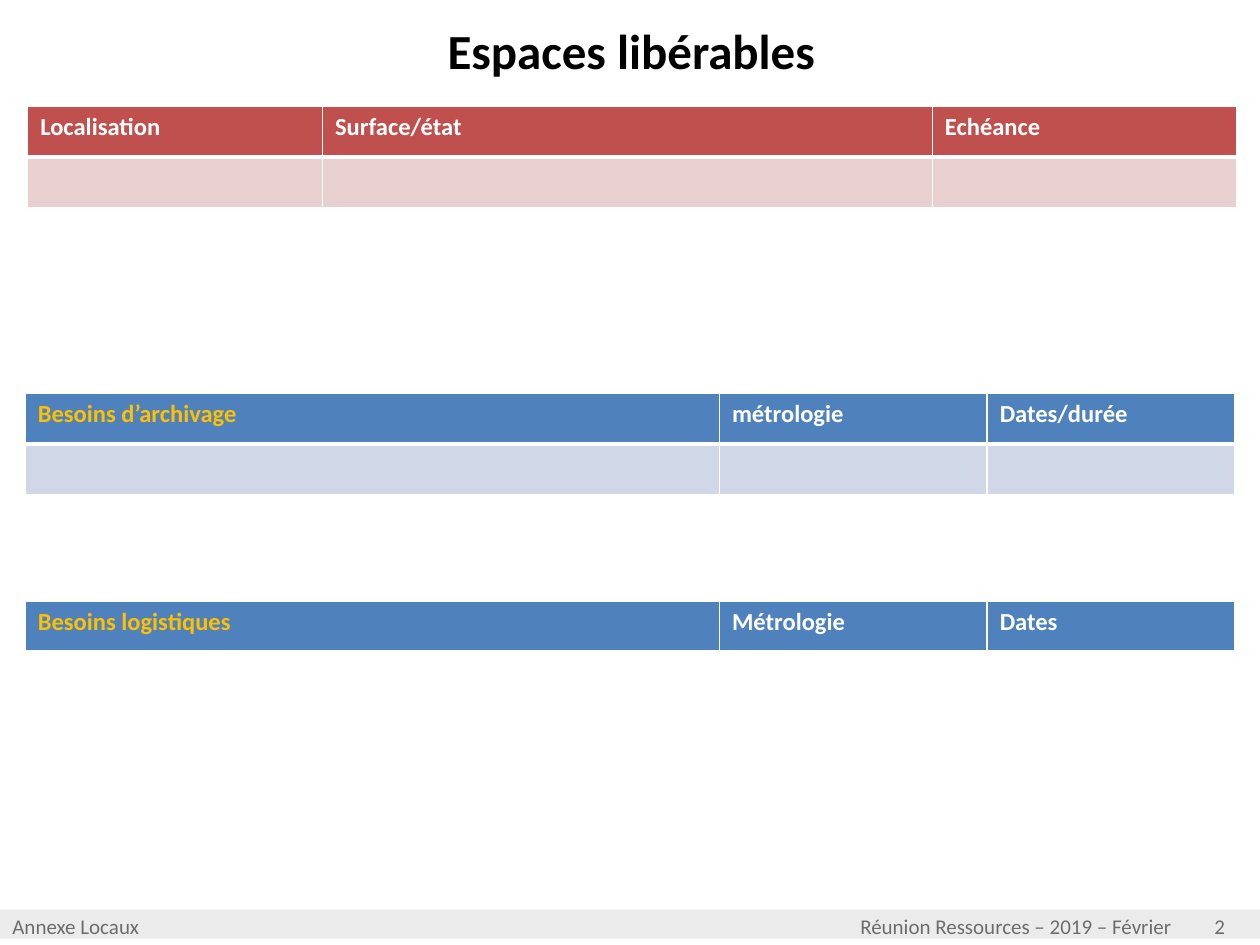
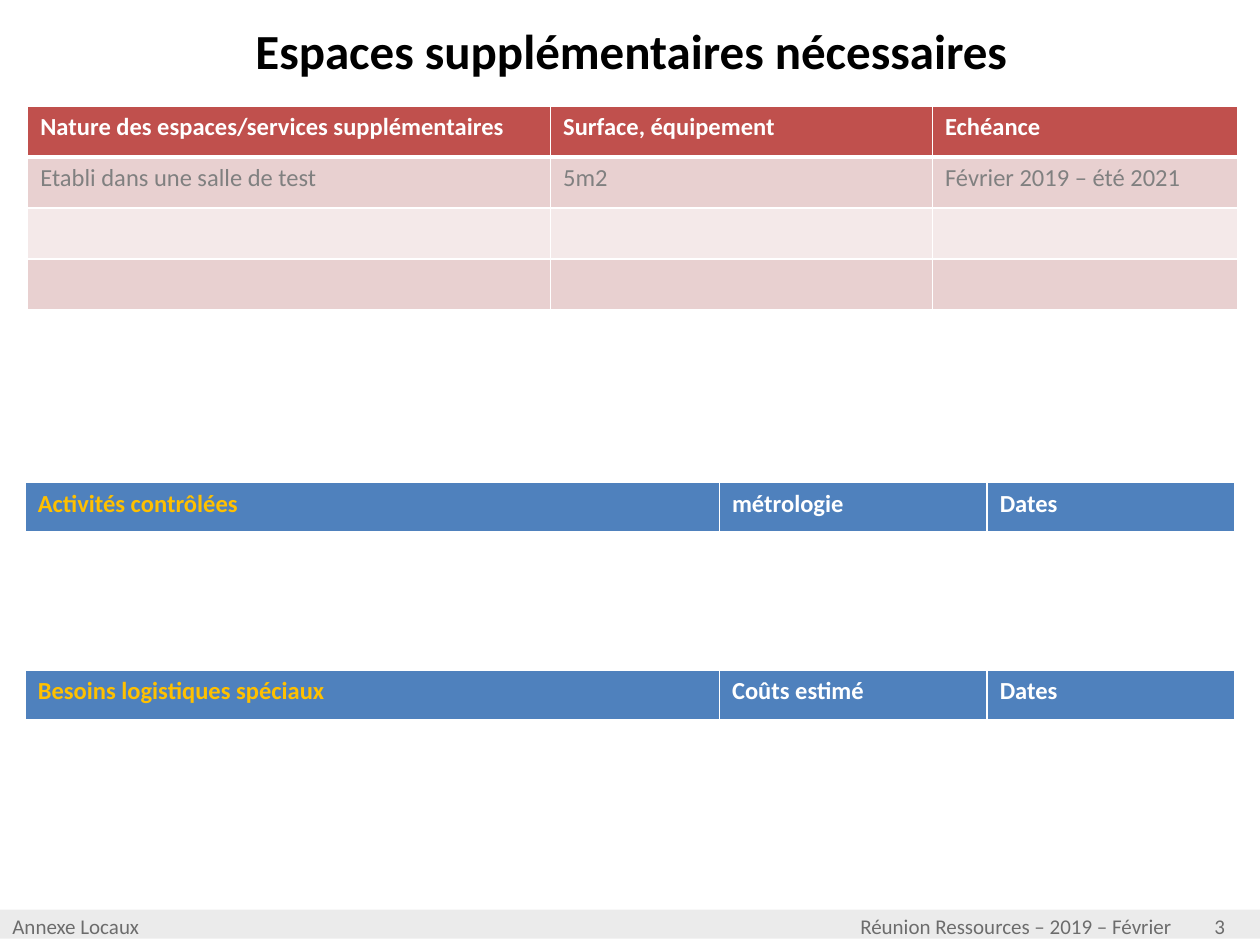
from dataclasses import dataclass

from lxml import etree
from pptx import Presentation
from pptx.dml.color import RGBColor
from pptx.enum.shapes import MSO_SHAPE
from pptx.enum.text import MSO_ANCHOR, PP_ALIGN
from pptx.oxml.ns import qn
from pptx.util import Inches, Pt

RECTANGLE = MSO_SHAPE.RECTANGLE
MIDDLE, TOP = MSO_ANCHOR.MIDDLE, MSO_ANCHOR.TOP
CENTER, LEFT = PP_ALIGN.CENTER, PP_ALIGN.LEFT

SLIDE_W, SLIDE_H = Inches(10), Inches(7.5)


@dataclass(frozen=True)
class Theme:
    font: str = "Calibri"
    title_size: int = 28
    table_size: int = 14
    footer_size: int = 12
    ink: str = "000000"
    white: str = "FFFFFF"
    example: str = "808080"
    accent: str = "FFC000"
    band: str = "D9D9D9"
    band_opacity: int = 50
    thin_rule: int = 1
    header_rule: int = 3


THEME = Theme()


@dataclass(frozen=True)
class Box:
    """Place on the slide, in percent of its width and height."""
    left: float
    top: float
    width: float
    height: float

    def emu(self) -> tuple[int, int, int, int]:
        return (across(self.left), down(self.top),
                across(self.width), down(self.height))


@dataclass(frozen=True)
class Palette:
    header: str
    first_header: str
    stripes: tuple[str, ...]


@dataclass(frozen=True)
class Layout:
    """Left edge and column widths in percent of the slide's width."""
    left: float
    columns: tuple[float, ...]
    palette: Palette


@dataclass(frozen=True)
class Grid:
    layout: Layout
    top: float
    header: tuple[str, ...]
    example: tuple[str, ...] = ()
    body_rows: int = 0


@dataclass(frozen=True)
class Page:
    number: int
    title: str
    grids: tuple[Grid, ...]


# Shared positions and table styles
ROW_HEIGHT = 5.4
TITLE_BOX = Box(5.1, 0.67, 90, 9.2)
BAND_BOX = Box(0, 96.27, 100, 3.07)
SPACES_TOP = 11.2
RED = Palette("C0504D", THEME.white, ("E8D0D0", "F4E9E9"))
BLUE = Palette("4F81BD", THEME.accent, ("D0D8E8",))
FREED_SPACES = Layout(2.2, (23.4, 48.4, 24.2), RED)
EXTRA_SPACES = Layout(2.2, (41.5, 30.3, 24.2), RED)
NEEDS = Layout(2, (55.1, 21.25, 19.65), BLUE)

PAGES = (
    Page(2, "Espaces libérables", (
        Grid(FREED_SPACES, SPACES_TOP,
             ("Localisation", "Surface/état", "Echéance"), body_rows=1),
        Grid(NEEDS, 63.6, ("Besoins logistiques", "Métrologie", "Dates")),
        Grid(NEEDS, 41.6, ("Besoins d’archivage", "métrologie", "Dates/durée"),
             body_rows=1),
    )),
    Page(3, "Espaces supplémentaires nécessaires", (
        Grid(EXTRA_SPACES, SPACES_TOP,
             ("Nature des espaces/services supplémentaires",
              "Surface, équipement", "Echéance"),
             ("Etabli dans une salle de test", "5m2", "Février 2019 – été 2021"),
             body_rows=3),
        Grid(NEEDS, 70.93, ("Besoins logistiques spéciaux", "Coûts estimé", "Dates")),
        Grid(NEEDS, 51.07, ("Activités contrôlées", "métrologie", "Dates")),
    )),
)


def across(percent: float) -> int:
    return round(SLIDE_W * percent / 100)


def down(percent: float) -> int:
    return round(SLIDE_H * percent / 100)


def write(frame, text: str, size: int, color: str, bold: bool = False,
          align=LEFT) -> None:
    paragraph = frame.paragraphs[0]
    paragraph.alignment = align
    run = paragraph.add_run()
    run.text = text
    formats = {"name": THEME.font, "size": Pt(size), "bold": bold}
    for attribute, value in formats.items():
        setattr(run.font, attribute, value)
    run.font.color.rgb = RGBColor.from_string(color)


def add_text(slide, box: Box, text: str, size: int, bold: bool = False,
             align=LEFT, anchor=TOP, wrap: bool = False) -> None:
    frame = slide.shapes.add_textbox(*box.emu()).text_frame
    for attribute, value in {"word_wrap": wrap, "vertical_anchor": anchor}.items():
        setattr(frame, attribute, value)
    write(frame, text, size, THEME.ink, bold, align)


def add_footer(slide, number: int) -> None:
    labels = (
        (67.3, 27, "Réunion Ressources – 2019 – Février"),
        (95.4, 4.8, str(number)),
        (0, 12.2, "Annexe Locaux"),
    )
    for left, width, text in labels:
        add_text(slide, Box(left, 96, width, 4), text, THEME.footer_size)

    # The translucent band lies over the labels and greys them
    band = slide.shapes.add_shape(RECTANGLE, *BAND_BOX.emu())
    band.shadow.inherit = False
    band.line.fill.background()
    band.fill.solid()
    band.fill.fore_color.rgb = RGBColor.from_string(THEME.band)
    color = band.fill._xPr.find(qn("a:solidFill"))[0]
    etree.SubElement(color, qn("a:alpha"), val=str(THEME.band_opacity * 1000))


def style_cell(cell, color: str, top_rule: int, bottom_rule: int) -> None:
    properties = cell._tc.get_or_add_tcPr()
    rules = {"L": THEME.thin_rule, "R": THEME.thin_rule,
             "T": top_rule, "B": bottom_rule}
    for side, points in rules.items():
        rule = etree.SubElement(properties, qn(f"a:ln{side}"), w=str(Pt(points)))
        paint = etree.SubElement(rule, qn("a:solidFill"))
        etree.SubElement(paint, qn("a:srgbClr"), val=THEME.white)
    cell.fill.solid()
    cell.fill.fore_color.rgb = RGBColor.from_string(color)


def add_grid(slide, grid: Grid) -> None:
    layout, palette = grid.layout, grid.layout.palette
    row_count = 1 + grid.body_rows
    box = Box(layout.left, grid.top, sum(layout.columns), ROW_HEIGHT * row_count)
    table = slide.shapes.add_table(row_count, len(layout.columns), *box.emu()).table
    for column, width in zip(table.columns, layout.columns):
        column.width = across(width)
    for row in table.rows:
        row.height = down(ROW_HEIGHT)

    # Header row
    for index, text in enumerate(grid.header):
        cell = table.cell(0, index)
        style_cell(cell, palette.header, THEME.thin_rule, THEME.header_rule)
        color = THEME.white if index else palette.first_header
        write(cell.text_frame, text, THEME.table_size, color, bold=True)

    # Striped body rows
    for row in range(1, row_count):
        stripe = palette.stripes[(row - 1) % len(palette.stripes)]
        top_rule = THEME.header_rule if row == 1 else THEME.thin_rule
        for index in range(len(layout.columns)):
            style_cell(table.cell(row, index), stripe, top_rule, THEME.thin_rule)
    for index, text in enumerate(grid.example):
        write(table.cell(1, index).text_frame, text, THEME.table_size, THEME.example)


def add_page(deck, page: Page) -> None:
    slide = deck.slides.add_slide(deck.slide_layouts[6])
    add_footer(slide, page.number)
    add_text(slide, TITLE_BOX, page.title, THEME.title_size, bold=True,
             align=CENTER, anchor=MIDDLE, wrap=True)
    for grid in page.grids:
        add_grid(slide, grid)


def main() -> None:
    deck = Presentation()
    deck.slide_width, deck.slide_height = SLIDE_W, SLIDE_H
    for page in PAGES:
        add_page(deck, page)
    deck.save("out.pptx")


if __name__ == "__main__":
    main()
